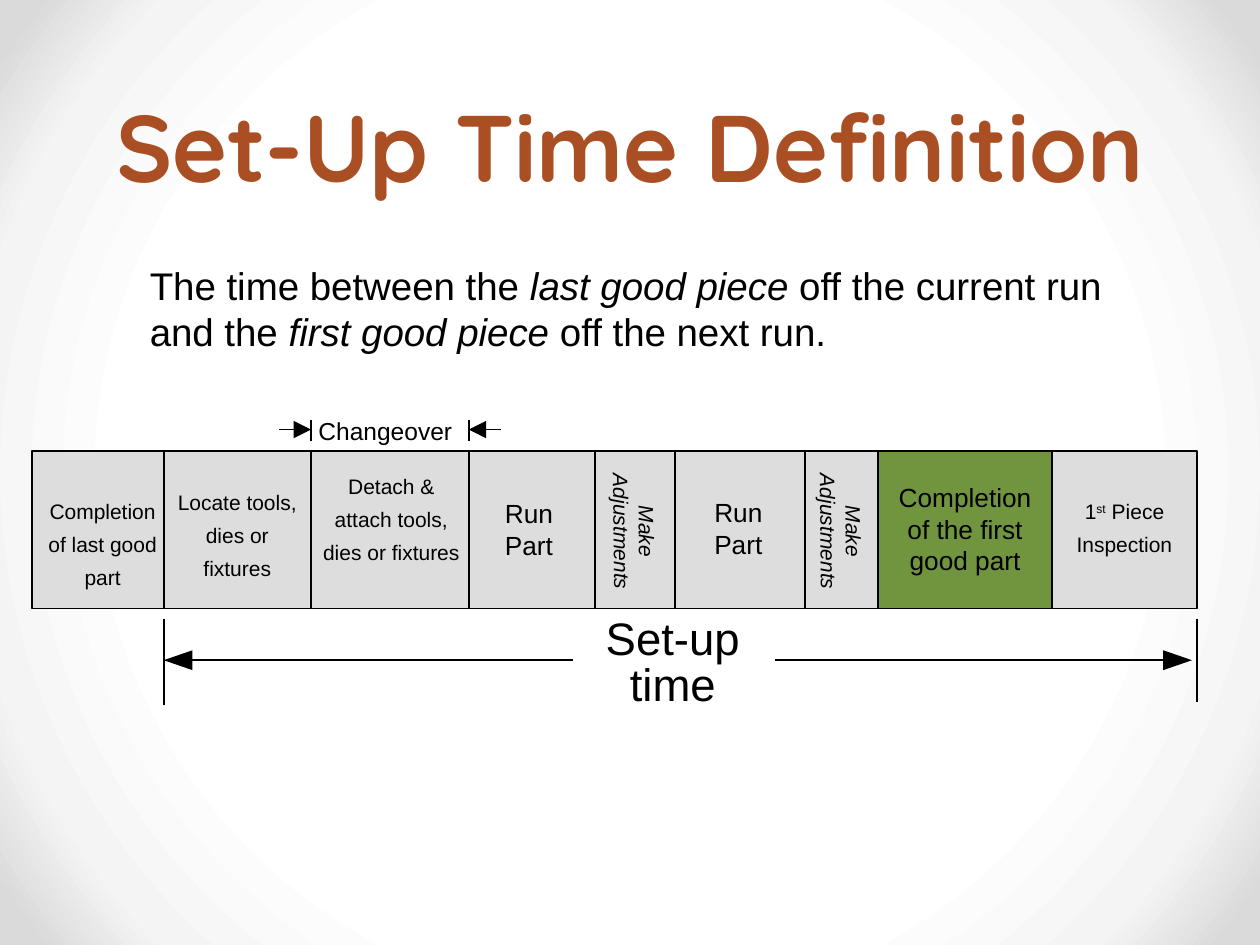
"""Build the set-up time definition slide with its changeover timeline."""
from lxml.etree import SubElement
from pptx import Presentation
from pptx.dml.color import RGBColor
from pptx.enum.shapes import MSO_CONNECTOR, MSO_SHAPE
from pptx.enum.text import MSO_ANCHOR, PP_ALIGN
from pptx.oxml import parse_xml
from pptx.oxml.ns import nsdecls, qn
from pptx.util import Cm, Pt

COLORS = {"ink": "000000", "title": "AA4F24", "step": "DDDDDD", "good": "71943F"}
BACKDROP = [(64, "FFFFFF"), (84, "F4F4F4"), (96, "DADADA")]

TITLE = "Set-Up Time Definition"
DEFINITION = [
    ("The time between the ", ""), ("last good piece", "italic"),
    (" off the current run and the ", ""), ("first good piece", "italic"),
    (" off the next run.", ""),
]
INSPECTION = [("1", ""), ("st", "super"), (" Piece Inspection", "")]

SMALL = {"size": 12, "spacing": 1.3}
RUN = {"size": 15, "align": PP_ALIGN.LEFT, "wrap": False}
ADJUST = {"size": 12, "italic": True, "rotation": 89.4}
LABELS = [
    ((1.27, 1.47, 22.86, 2.72), [TITLE],
     {"size": 54, "font": "Quicksand", "color": "title", "bold": True,
      "spacing": Pt(58), "anchor": MSO_ANCHOR.BOTTOM}),
    ((2.77, 5.16, 19.84, 2.11), [DEFINITION], {"size": 22, "align": PP_ALIGN.LEFT}),
    ((6.17, 8.26, 3.35, 0.84), ["Changeover"],
     {"size": 14, "align": PP_ALIGN.LEFT, "wrap": False}),
    ((0.61, 9.78, 2.92, 2.24), ["Completion of last good part"], SMALL),
    ((3.3, 9.6, 2.97, 2.24), ["Locate tools, dies or fixtures"], SMALL),
    ((6.2, 9.27, 3.38, 2.9), ["Detach & attach tools, dies or fixtures"], SMALL),
    ((9.93, 9.91, 1.55, 1.52), ["Run", "Part"], RUN),
    ((11.1, 10.08, 3.38, 1.27), ["Make Adjustments"], ADJUST),
    ((14.15, 9.88, 1.55, 1.52), ["Run", "Part"], RUN),
    ((15.27, 10.08, 3.38, 1.27), ["Make Adjustments"], ADJUST),
    ((17.55, 9.58, 3.81, 2.16), ["Completion", "of the first", "good part"], {"size": 15}),
    ((21.26, 9.78, 2.82, 1.57), [INSPECTION], SMALL),
    ((11.89, 12.34, 3.35, 2.13), ["Set-up", "time"],
     {"size": 26, "spacing": 0.85, "wrap": False}),
]

BAND_LEFT, BAND_RIGHT, BAND_TOP, BAND_BOTTOM = 0.64, 24.13, 9.09, 12.27
DIVIDERS = [3.3, 6.27, 9.45, 11.99, 13.61, 16.23]
GOOD_LEFT, GOOD_RIGHT = 17.7, 21.21
SETUP_START, CHANGE_START, CHANGE_END = DIVIDERS[:3]
CHANGE_Y, CHANGE_ARROW = 8.66, 0.64
SETUP_Y, HEAD_LENGTH, HEAD_HALF = 13.31, 0.58, 0.2
LINES = [(x, BAND_TOP, x, BAND_BOTTOM) for x in DIVIDERS]
LINES += [(x, 8.46, x, 8.89) for x in (CHANGE_START, CHANGE_END)]
LINES += [
    (SETUP_START, 12.47, SETUP_START, 14.22),
    (BAND_RIGHT, 12.47, BAND_RIGHT, 14.15),
    (3.61, SETUP_Y, 11.56, SETUP_Y),
    (15.62, SETUP_Y, 23.72, SETUP_Y),
]
CHANGE_ARROWS = [
    (CHANGE_START - CHANGE_ARROW, CHANGE_Y, CHANGE_START, CHANGE_Y),
    (CHANGE_END + CHANGE_ARROW, CHANGE_Y, CHANGE_END, CHANGE_Y),
]
SETUP_HEADS = [(SETUP_START, HEAD_LENGTH), (24.03, -HEAD_LENGTH)]


def rgb(name):
    return RGBColor.from_string(COLORS[name])


def paint_backdrop(slide):
    stops = "".join(
        f'<a:gs pos="{pos * 1000}"><a:srgbClr val="{color}"/></a:gs>'
        for pos, color in BACKDROP)
    slide.element.cSld.insert(0, parse_xml(
        f'<p:bg {nsdecls("p", "a")}><p:bgPr><a:gradFill rotWithShape="1">'
        f'<a:gsLst>{stops}</a:gsLst><a:path path="circle">'
        '<a:fillToRect l="50000" t="50000" r="50000" b="50000"/></a:path>'
        '</a:gradFill><a:effectLst/></p:bgPr></p:bg>'))


def add_box(slide, left, right, fill):
    box = slide.shapes.add_shape(
        MSO_SHAPE.RECTANGLE, Cm(left), Cm(BAND_TOP),
        Cm(right - left), Cm(BAND_BOTTOM - BAND_TOP))
    box.shadow.inherit = False
    box.fill.solid()
    box.fill.fore_color.rgb = rgb(fill)
    box.line.color.rgb = rgb("ink")
    box.line.width = Pt(1)


def add_line(slide, ends, arrow=False):
    line = slide.shapes.add_connector(MSO_CONNECTOR.STRAIGHT, *map(Cm, ends))
    line.line.color.rgb = rgb("ink")
    line.line.width = Pt(1)
    if arrow:
        SubElement(line.line._get_or_add_ln(), qn("a:tailEnd"), type="triangle",
                   w="lg", len="lg")
    SubElement(line._element.spPr, qn("a:effectLst"))


def add_setup_head(slide, tip, length):
    outline = slide.shapes.build_freeform(Cm(tip), Cm(SETUP_Y))
    outline.add_line_segments(
        [(Cm(tip + length), Cm(SETUP_Y + side)) for side in (HEAD_HALF, -HEAD_HALF)])
    head = outline.convert_to_shape()
    head.shadow.inherit = False
    head.fill.solid()
    head.fill.fore_color.rgb = rgb("ink")
    head.line.fill.background()


def add_label(slide, place, paragraphs, style):
    label = slide.shapes.add_textbox(*map(Cm, place))
    label.rotation = style.get("rotation", 0)
    frame = label.text_frame
    frame.word_wrap = style.get("wrap", True)
    frame.vertical_anchor = style.get("anchor", MSO_ANCHOR.TOP)
    for index, content in enumerate(paragraphs):
        paragraph = frame.add_paragraph() if index else frame.paragraphs[0]
        paragraph.alignment = style.get("align", PP_ALIGN.CENTER)
        paragraph.line_spacing = style.get("spacing", 1.0)
        font = paragraph.font
        font.name = style.get("font", "Arial")
        font.size = Pt(style["size"])
        font.bold = style.get("bold")
        font.italic = style.get("italic")
        font.color.rgb = rgb(style.get("color", "ink"))
        for text, accent in [(content, "")] if isinstance(content, str) else content:
            run = paragraph.add_run()
            run.text = text
            if accent == "italic":
                run.font.italic = True
            elif accent == "super":
                run.font._element.set("baseline", "30000")


def main():
    deck = Presentation()
    deck.slide_width, deck.slide_height = Cm(25.4), Cm(19.05)
    slide = deck.slides.add_slide(deck.slide_layouts[6])
    paint_backdrop(slide)
    add_box(slide, BAND_LEFT, BAND_RIGHT, "step")
    add_box(slide, GOOD_LEFT, GOOD_RIGHT, "good")
    for ends in LINES:
        add_line(slide, ends)
    for ends in CHANGE_ARROWS:
        add_line(slide, ends, arrow=True)
    for tip, length in SETUP_HEADS:
        add_setup_head(slide, tip, length)
    for place, paragraphs, style in LABELS:
        add_label(slide, place, paragraphs, style)
    deck.save("out.pptx")


if __name__ == "__main__":
    main()
